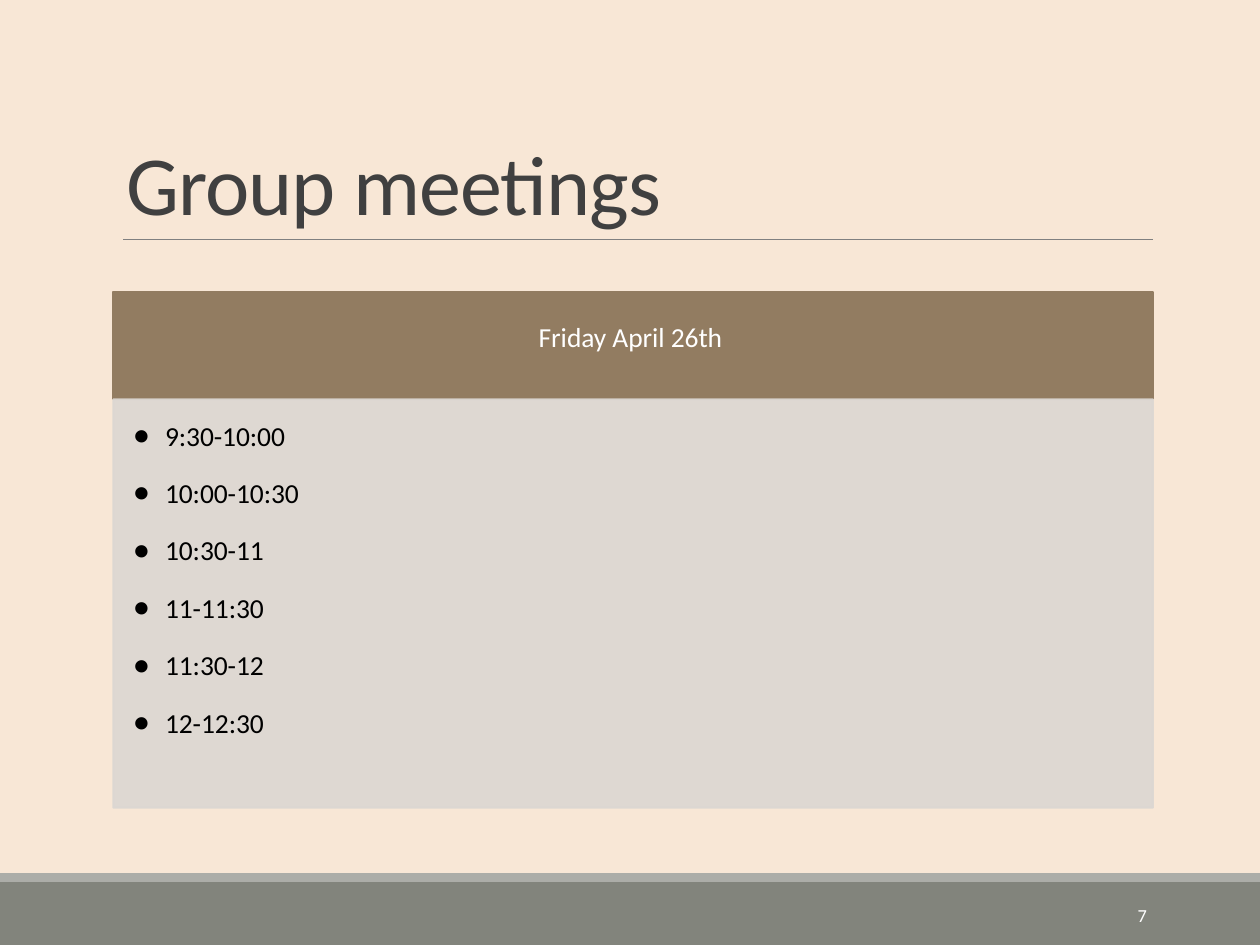
"""Builds the group meetings schedule slide."""
from dataclasses import dataclass

import pptx
import pptx.dml.color
import pptx.enum.shapes
import pptx.enum.text
import pptx.oxml.ns
import pptx.util
from lxml import etree
from pptx.util import Inches

ALIGN = pptx.enum.text.PP_ALIGN
ANCHOR = pptx.enum.text.MSO_ANCHOR
qn = pptx.oxml.ns.qn


@dataclass(frozen=True)
class Theme:
    """Colours, font and type sizes of the slide."""
    font: str = "Calibri"
    background: str = "F8E7D6"
    footer: str = "82847C"
    footer_edge: str = "ACADA8"
    rule: str = "808080"
    title: str = "404040"
    header: str = "927C61"
    panel: str = "DCD7D2"
    body: str = "000000"
    light: str = "FFFFFF"
    title_size: float = 48
    body_size: float = 27
    number_size: float = 10.5


class SlideBuilder:
    """Draws styled elements on one slide."""

    def __init__(self, presentation, theme):
        """Adds a title-only slide with the theme background."""
        self.theme = theme
        self.slide = presentation.slides.add_slide(presentation.slide_layouts[5])
        self.paint(self.slide.background.fill, theme.background)

    def paint(self, fill, color, opacity=100):
        """Applies a solid colour, optionally translucent."""
        fill.solid()
        fill.fore_color.rgb = pptx.dml.color.RGBColor.from_string(color)
        if opacity < 100:
            for node in fill._xPr.iter(qn("a:srgbClr")):
                etree.SubElement(node, qn("a:alpha"), val=str(opacity * 1000))

    def run(self, paragraph, text, size, color):
        """Adds one styled run and returns it."""
        run = paragraph.add_run()
        run.text = text
        run.font.name = self.theme.font
        run.font.size = pptx.util.Pt(size)
        self.paint(run.font.fill, color)
        return run

    def raised(self, paragraph, text, color, space_after):
        """Fills a paragraph with a raised run."""
        paragraph.line_spacing = 0.9
        paragraph.space_after = pptx.util.Pt(space_after)
        run = self.run(paragraph, text, self.theme.body_size, color)
        run.font._element.set("baseline", "30000")

    def title(self, text, left, top, width, height):
        """Places and formats the title placeholder."""
        title = self.slide.shapes.title
        title.left, title.top, title.width, title.height = left, top, width, height
        frame = title.text_frame
        frame.auto_size = pptx.enum.text.MSO_AUTO_SIZE.NONE
        frame.vertical_anchor = ANCHOR.BOTTOM
        paragraph = frame.paragraphs[0]
        paragraph.alignment = ALIGN.LEFT
        paragraph.line_spacing = 0.85
        run = self.run(paragraph, text, self.theme.title_size, self.theme.title)
        run.font._element.set("spc", "-50")

    def box(self, color, left, top, width, height, outlined=False, opacity=100):
        """Adds a filled rectangle."""
        shape = self.slide.shapes.add_shape(
            pptx.enum.shapes.MSO_SHAPE.RECTANGLE, left, top, width, height)
        shape.shadow.inherit = False
        self.paint(shape.fill, color, opacity)
        if outlined:
            shape.line.width = pptx.util.Pt(1.25)
            self.paint(shape.line.fill, color, opacity)
        else:
            shape.line.fill.background()
        return shape

    def frame(self, shape, anchor, insets):
        """Prepares a text frame and returns it."""
        frame = shape.text_frame
        frame.word_wrap = True
        frame.vertical_anchor = anchor
        (frame.margin_left, frame.margin_top,
         frame.margin_right, frame.margin_bottom) = map(Inches, insets)
        return frame

    def rule(self, left, top, right):
        """Adds a thin horizontal line."""
        line = self.slide.shapes.add_connector(
            pptx.enum.shapes.MSO_CONNECTOR.STRAIGHT, left, top, right, top)
        line.line.width = pptx.util.Pt(0.5)
        self.paint(line.line.fill, self.theme.rule)
        etree.SubElement(line._element.spPr, qn("a:effectLst"))

    def header(self, text, *place):
        """Adds the coloured heading of the schedule."""
        shape = self.box(self.theme.header, *place, outlined=True)
        frame = self.frame(shape, ANCHOR.MIDDLE, (0.21, 0.12, 0.21, 0.12))
        paragraph = frame.paragraphs[0]
        paragraph.alignment = ALIGN.CENTER
        self.raised(paragraph, text, self.theme.light, 9.5)

    def bullets(self, items, *place):
        """Adds the translucent panel with its bulleted items."""
        shape = self.box(self.theme.panel, *place, outlined=True, opacity=90)
        frame = self.frame(shape, ANCHOR.TOP, (0.16, 0.16, 0.21, 0.24))
        for index, item in enumerate(items):
            paragraph = frame.add_paragraph() if index else frame.paragraphs[0]
            paragraph.alignment = ALIGN.LEFT
            paragraph.level = 1
            self.raised(paragraph, item, self.theme.body, 3.6)
            properties = paragraph._p.get_or_add_pPr()
            properties.set("marL", str(Inches(0.25)))
            properties.set("indent", str(-Inches(0.25)))
            etree.SubElement(properties, qn("a:buChar"), char="•")

    def number(self, text, *place):
        """Adds the page number."""
        shape = self.slide.shapes.add_textbox(*place)
        frame = self.frame(shape, ANCHOR.MIDDLE, (0.1, 0.05, 0.1, 0.05))
        paragraph = frame.paragraphs[0]
        paragraph.alignment = ALIGN.RIGHT
        paragraph.space_after = pptx.util.Pt(6)
        self.run(paragraph, text, self.theme.number_size, self.theme.light)


def main():
    """Builds and saves the presentation."""
    presentation = pptx.Presentation()
    presentation.slide_width = Inches(10)
    presentation.slide_height = Inches(7.5)
    theme = Theme()
    builder = SlideBuilder(presentation, theme)
    left, width = Inches(0.9), Inches(8.25)
    times = ["9:30-10:00", "10:00-10:30", "10:30-11",
             "11-11:30", "11:30-12", "12-12:30"]

    builder.box(theme.footer, 0, Inches(7), Inches(10), Inches(0.5))
    builder.box(theme.footer_edge, 0, Inches(6.93), Inches(10), Inches(0.07))
    builder.rule(Inches(0.98), Inches(1.9), left + width)
    builder.title("Group meetings", left, Inches(0.31), width, Inches(1.59))
    builder.header("Friday April 26th\t", left, Inches(2.32), width, Inches(0.85))
    builder.bullets(times, left, Inches(3.17), width, Inches(3.24))
    builder.number("7", Inches(8.12), Inches(7.06), Inches(1.08), Inches(0.4))
    presentation.save("out.pptx")


if __name__ == "__main__":
    main()
